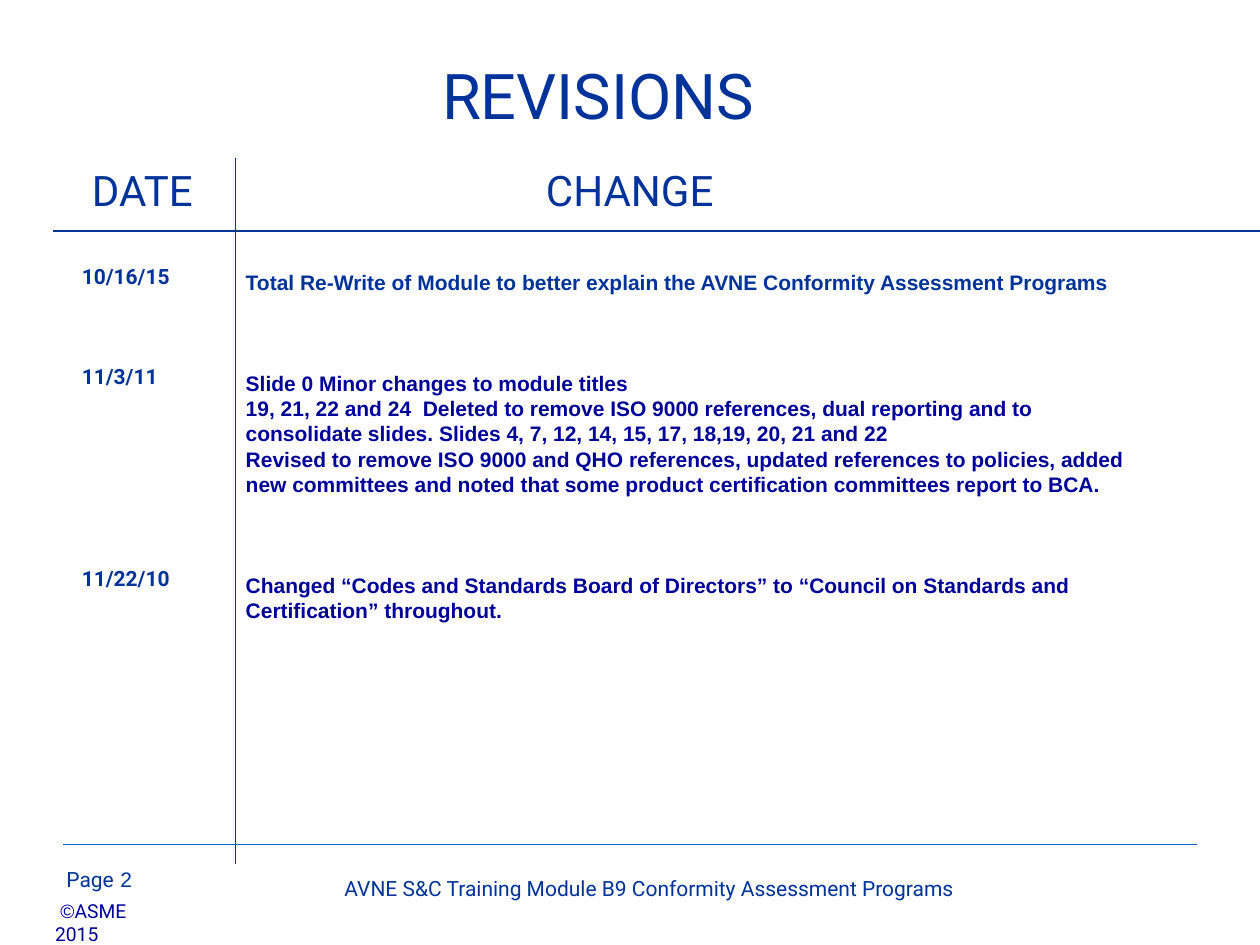
import pptx
import pptx.dml.color
import pptx.enum.shapes
import pptx.enum.text
import pptx.oxml.ns
import pptx.util
from pptx.util import Cm

BLUE, NAVY, RULE_BLUE = "003399", "000099", "0066CC"
LINE_PITCH = 14.4
ROW_GAP = 3 * LINE_PITCH
CENTER = pptx.enum.text.PP_ALIGN.CENTER
LEFT = pptx.enum.text.PP_ALIGN.LEFT

DATES = [("10/16/15", BLUE, 0), ("11/3/11", BLUE, ROW_GAP),
         ("11/22/10", BLUE, 7 * LINE_PITCH)]
CHANGES = [
    ("Total Re-Write of Module to better explain the AVNE Conformity "
     "Assessment Programs", BLUE, 0),
    ("Slide 0 Minor changes to module titles", NAVY, ROW_GAP),
    ("19, 21, 22 and 24  Deleted to remove ISO 9000 references, dual reporting "
     "and to consolidate slides. Slides 4, 7, 12, 14, 15, 17, 18,19, 20, 21 "
     "and 22", NAVY, 0),
    ("Revised to remove ISO 9000 and QHO references, updated references to "
     "policies, added new committees and noted that some product certification "
     "committees report to BCA.", NAVY, 0),
    ("Changed “Codes and Standards Board of Directors” to “Council on "
     "Standards and Certification” throughout.", NAVY, ROW_GAP),
]


def rgb(color):
    return pptx.dml.color.RGBColor.from_string(color)


def place(sp, left, top, width, height):
    sp.left, sp.top, sp.width, sp.height = Cm(left), Cm(top), Cm(width), Cm(height)


def add_run(p, text, size, font="Roboto", color=BLUE, bold=False):
    r = p.add_run()
    r.text = text
    r.font.size = pptx.util.Pt(size)
    r.font.name = font
    r.font.bold = bold
    r.font.color.rgb = rgb(color)


def add_box(slide, left, top, width, height):
    sp = slide.shapes.add_textbox(Cm(left), Cm(top), Cm(width), Cm(height))
    sp.text_frame.word_wrap = True
    return sp.text_frame


def add_label(slide, box, text, size, font="Roboto", align=LEFT):
    p = add_box(slide, *box).paragraphs[0]
    p.alignment = align
    add_run(p, text, size, font)


def add_rule(slide, x1, y1, x2, y2, color=BLUE, width=1):
    line = slide.shapes.add_connector(
        pptx.enum.shapes.MSO_CONNECTOR.STRAIGHT, Cm(x1), Cm(y1), Cm(x2), Cm(y2))
    line.line.color.rgb = rgb(color)
    line.line.width = pptx.util.Pt(width)
    sp_pr = line._element.spPr
    sp_pr.append(sp_pr.makeelement(pptx.oxml.ns.qn("a:effectLst"), {}))


def fill_rows(tf, rows, font):
    """Write (text, colour, space before) rows as unbulleted bold paragraphs."""
    for i, (text, color, gap) in enumerate(rows):
        p = tf.add_paragraph() if i else tf.paragraphs[0]
        p_pr = p._p.get_or_add_pPr()
        p_pr.set("marL", "0")
        p_pr.set("indent", "0")
        p_pr.append(p_pr.makeelement(pptx.oxml.ns.qn("a:buNone"), {}))
        p.alignment = LEFT
        p.line_spacing = pptx.util.Pt(LINE_PITCH)
        p.space_before = pptx.util.Pt(gap)
        add_run(p, text, 12, font, color, bold=True)


def add_title(slide, text):
    sp = slide.shapes.title
    place(sp, 1.9, 0.84, 20.32, 2.11)
    sp.text_frame.vertical_anchor = pptx.enum.text.MSO_ANCHOR.MIDDLE
    p = sp.text_frame.paragraphs[0]
    p.alignment = CENTER
    add_run(p, text, 36)


def add_changes(slide):
    sp = slide.placeholders[1]
    place(sp, 4.7, 5.31, 18.42, 9.5)
    sp.text_frame.auto_size = pptx.enum.text.MSO_AUTO_SIZE.NONE
    fill_rows(sp.text_frame, CHANGES, "Arial")


def add_footer(slide):
    add_rule(slide, 1.27, 17.02, 24.13, 17.02, RULE_BLUE, 0.75)
    add_label(slide, (1.09, 17.35, 1.9, 1.32), "Page", 12)
    add_label(slide, (2.18, 17.35, 1.19, 1.32), "2", 12, "Arial")
    add_label(slide, (4.62, 17.53, 16.94, 1.32),
              "AVNE S&C Training Module B9 Conformity Assessment Programs",
              12, align=CENTER)
    p = add_box(slide, 0.86, 18.01, 2.3, 1.1).paragraphs[0]
    add_run(p, " ", 11, "Arial")
    add_run(p, "©", 11, "Arial", NAVY)
    add_run(p, "ASME 2015", 11, color=NAVY)


def main():
    prs = pptx.Presentation()
    prs.slide_width, prs.slide_height = Cm(25.4), Cm(19.05)
    slide = prs.slides.add_slide(prs.slide_layouts[1])
    add_title(slide, "REVISIONS")
    add_label(slide, (1.07, 3.2, 3.6, 1.5), "DATE", 24, align=CENTER)
    add_label(slide, (5.28, 3.2, 15.04, 1.5), "CHANGE ", 24, align=CENTER)
    add_rule(slide, 4.75, 3.18, 4.75, 17.42)
    add_rule(slide, 1.07, 4.65, 25.4, 4.65)
    fill_rows(add_box(slide, 1.4, 5.18, 3.2, 12.5), DATES, "Roboto")
    add_changes(slide)
    add_footer(slide)
    prs.save("out.pptx")


if __name__ == "__main__":
    main()
